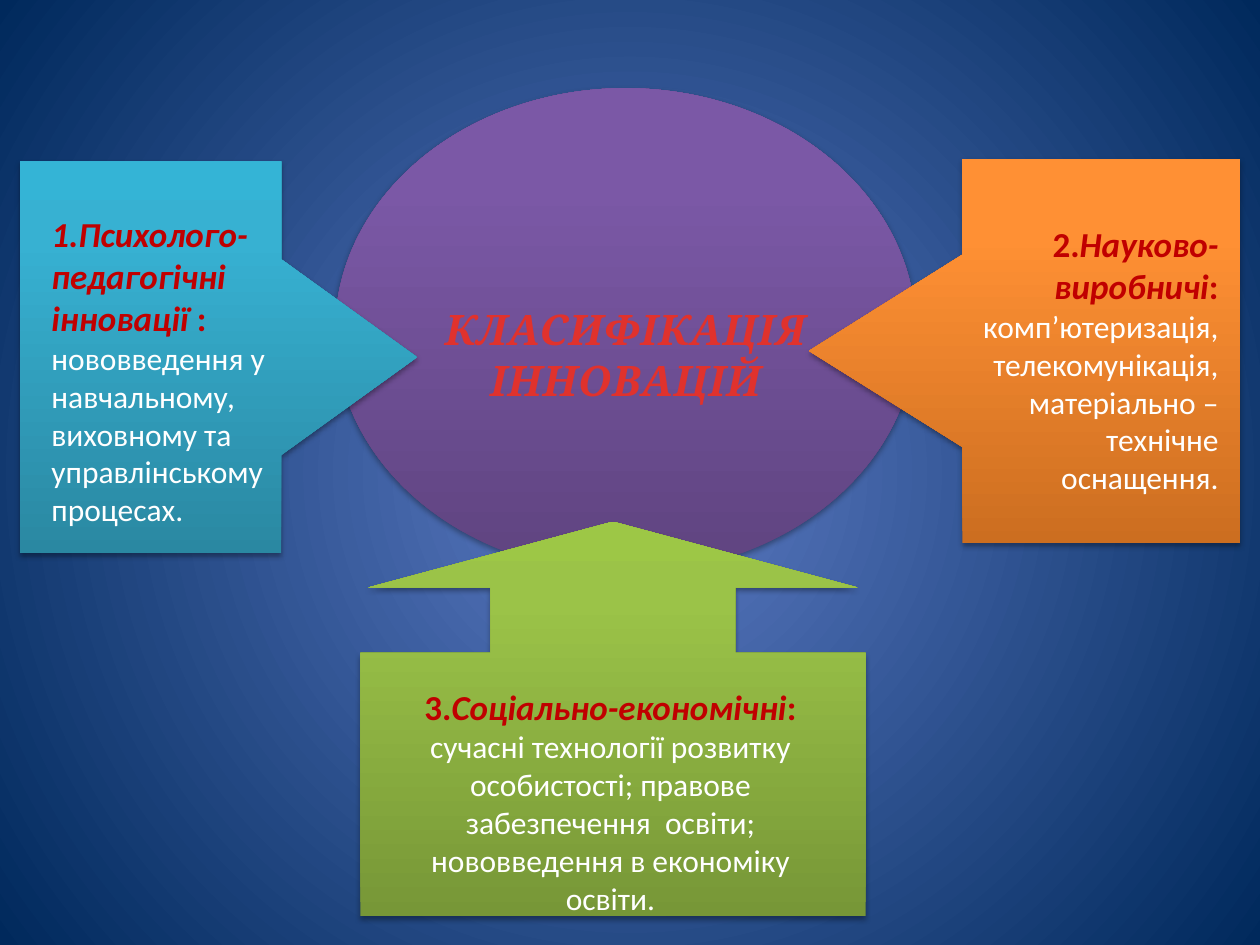
from dataclasses import dataclass

from lxml import etree
from pptx import Presentation
from pptx.dml.color import RGBColor
from pptx.enum.shapes import MSO_SHAPE
from pptx.enum.text import MSO_ANCHOR, MSO_AUTO_SIZE, PP_ALIGN
from pptx.oxml.ns import qn
from pptx.util import Inches, Pt

ELLIPSE = MSO_SHAPE.OVAL
RIGHT_CALLOUT = MSO_SHAPE.RIGHT_ARROW_CALLOUT
LEFT_CALLOUT = MSO_SHAPE.LEFT_ARROW_CALLOUT
UP_CALLOUT = MSO_SHAPE.UP_ARROW_CALLOUT
LEFT, CENTER, RIGHT = PP_ALIGN.LEFT, PP_ALIGN.CENTER, PP_ALIGN.RIGHT
HEADING_COLOR, BODY_COLOR = "C00000", "FFFFFF"

Box = tuple[float, float, float, float]
Stops = list[tuple[int, str]]


@dataclass
class Panel:
    kind: MSO_SHAPE
    box: Box
    colors: tuple[str, str, str]
    adjustments: tuple[float, ...] = ()


@dataclass
class Caption:
    box: Box
    align: PP_ALIGN
    heading: list[tuple[str, bool]]  # text, italic
    body: str


CENTRE = Panel(ELLIPSE, (2.66, 0.7, 4.61, 3.85), ("5F4480", "7B58A6", "7C57A8"))
CALLOUTS = [
    Panel(RIGHT_CALLOUT, (0.16, 1.28, 3.15, 3.11), ("2A88A2", "37B1D2", "34B4D6"),
          (0.25, 0.25, 0.347, 0.667)),
    Panel(LEFT_CALLOUT, (6.42, 1.26, 3.42, 3.05), ("CC6E20", "FF9034", "FF9136"),
          (0.25, 0.25, 0.399, 0.667)),
    Panel(UP_CALLOUT, (2.86, 4.14, 4.01, 3.13), ("779737", "9BC348", "9DC746"),
          (0.62, 0.62, 0.167, 0.667)),
]
CAPTIONS = [
    Caption((0.31, 1.64, 2.27, 2.62), LEFT,
            [("1.Психолого-педагогічні інновації", True), (" : ", False)],
            "нововведення у навчальному, виховному та управлінському процесах."),
    Caption((7.66, 1.72, 2.11, 2.29), RIGHT,
            [("2.", False), ("Науково-виробничі", True), (": ", False)],
            "комп’ютеризація, телекомунікація, матеріально – технічне оснащення."),
    Caption((2.97, 5.39, 3.75, 1.95), CENTER,
            [("3.", False), ("Соціально-економічні", True), (":", False)],
            " сучасні технології розвитку особистості; правове забезпечення  освіти; "
            "нововведення в економіку освіти."),
]


def add_child(parent, tag: str, **attributes):
    return etree.SubElement(parent, qn(tag), {k: str(v) for k, v in attributes.items()})


def paint_gradient(fill, owner, stops: Stops, angle: int | None = None) -> None:
    """Fill with a linear gradient, or a circular one when no angle is given."""
    fill.gradient()
    gradient = next(owner.iter(qn("a:gradFill")))
    for child in list(gradient):
        gradient.remove(child)
    stop_list = add_child(gradient, "a:gsLst")
    for position, color in stops:
        stop = add_child(stop_list, "a:gs", pos=position * 1000)
        add_child(stop, "a:srgbClr", val=color)
    if angle is None:
        circle = add_child(gradient, "a:path", path="circle")
        add_child(circle, "a:fillToRect", l=50000, t=50000, r=50000, b=50000)
    else:
        add_child(gradient, "a:lin", ang=angle * 60000, scaled=0)


def add_shadow(shape) -> None:
    shape.shadow.inherit = False
    effects = shape.element.spPr.find(qn("a:effectLst"))
    shadow = add_child(effects, "a:outerShdw", blurRad=Pt(3.1), dist=Pt(1.8),
                       dir=90 * 60000, rotWithShape=0)
    black = add_child(shadow, "a:srgbClr", val="000000")
    add_child(black, "a:alpha", val=35000)


def add_panel(shapes, panel: Panel):
    shape = shapes.add_shape(panel.kind, *map(Inches, panel.box))
    for index, value in enumerate(panel.adjustments):
        shape.adjustments[index] = value
    stops = list(zip((0, 80, 100), panel.colors))
    paint_gradient(shape.fill, shape.element.spPr, stops, 270)
    shape.line.fill.background()
    add_shadow(shape)
    return shape


def add_title(shape, text: str) -> None:
    frame = shape.text_frame
    frame.word_wrap = True
    frame.vertical_anchor = MSO_ANCHOR.MIDDLE
    frame.margin_top = Inches(0.42)
    paragraph = frame.paragraphs[0]
    paragraph.alignment = CENTER
    run = paragraph.add_run()
    run.text = text
    font = run.font
    font.name, font.size, font.bold, font.italic = "Cambria", Pt(24), True, True
    paint_gradient(font.fill, paragraph.runs[0]._r, [(25, "E0322D"), (100, "A2201C")], 90)
    run._r.get_or_add_rPr().set("spc", "50")


def add_run(paragraph, text: str, size: int, color: str, bold: bool, italic: bool) -> None:
    run = paragraph.add_run()
    run.text = text
    font = run.font
    font.size, font.bold, font.italic = Pt(size), bold, italic
    font.color.rgb = RGBColor.from_string(color)


def add_caption(shapes, caption: Caption) -> None:
    frame = shapes.add_textbox(*map(Inches, caption.box)).text_frame
    frame.word_wrap = True
    frame.auto_size = MSO_AUTO_SIZE.SHAPE_TO_FIT_TEXT
    paragraph = frame.paragraphs[0]
    paragraph.alignment = caption.align
    paragraph.font.name = "Calibri"
    for text, italic in caption.heading:
        add_run(paragraph, text, 20, HEADING_COLOR, True, italic)
    add_run(paragraph, caption.body, 18, BODY_COLOR, False, False)


def main() -> None:
    prs = Presentation()
    prs.slide_width, prs.slide_height = Inches(10), Inches(7.5)
    slide = prs.slides.add_slide(prs.slide_layouts[6])

    # Background
    paint_gradient(slide.background.fill, slide.element, [(0, "5E7CC5"), (100, "00295C")])

    # Central ellipse with the arrows pointing at it
    diagram = slide.shapes.add_group_shape().shapes
    add_title(add_panel(diagram, CENTRE), "КЛАСИФІКАЦІЯ ІННОВАЦІЙ")
    for callout in CALLOUTS:
        add_panel(diagram, callout)

    # Captions over the arrows
    for caption in CAPTIONS:
        add_caption(slide.shapes, caption)

    prs.save("out.pptx")


if __name__ == "__main__":
    main()
